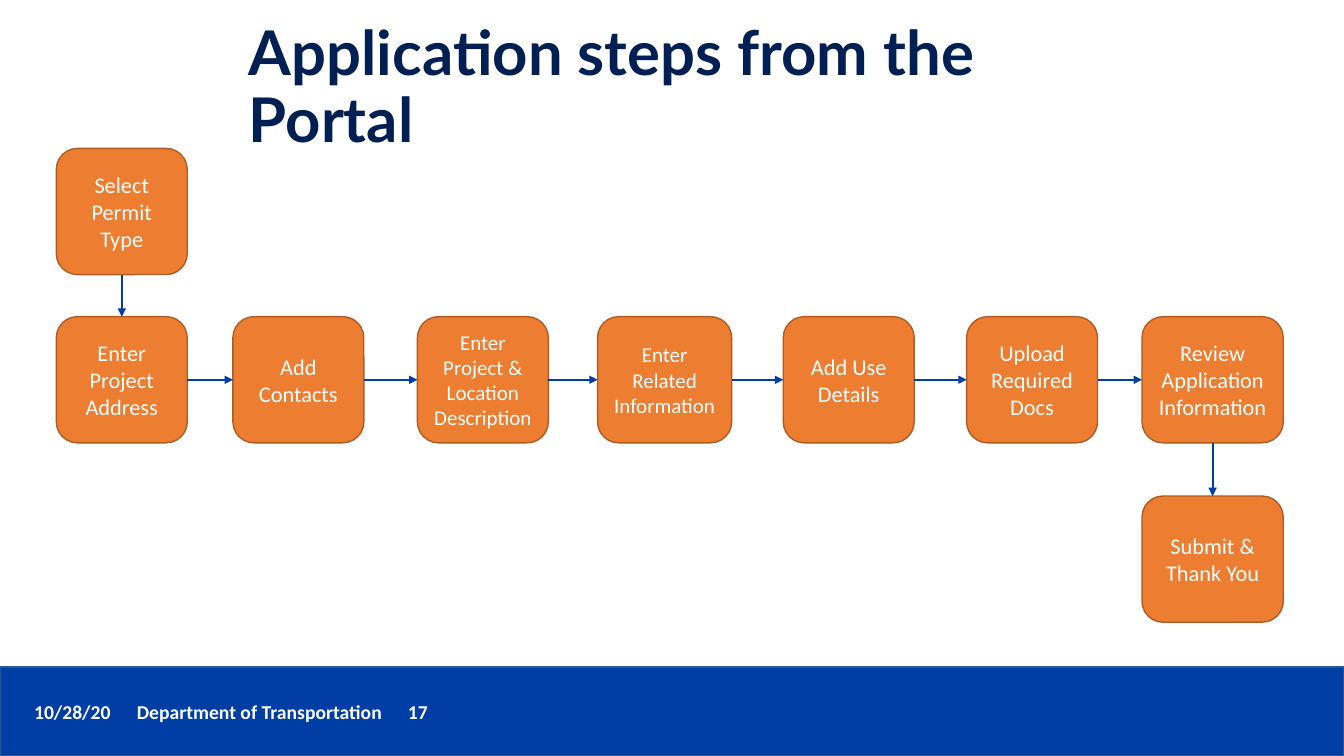
from collections import namedtuple

from pptx import Presentation
from pptx.dml.color import RGBColor
from pptx.enum.shapes import MSO_CONNECTOR as Link, MSO_SHAPE as Shape
from pptx.enum.text import MSO_ANCHOR as Anchor, MSO_AUTO_SIZE as Fit, PP_ALIGN as Align
from pptx.oxml.ns import qn
from pptx.util import Cm, Pt
from lxml.etree import SubElement

WHITE = RGBColor(0xFF, 0xFF, 0xFF)
NAVY = RGBColor(0x00, 0x1F, 0x52)
BLUE = RGBColor(0x00, 0x3D, 0xA5)
BAND_EDGE = RGBColor(0x31, 0x53, 0x8F)
ORANGE = RGBColor(0xED, 0x7D, 0x31)
ORANGE_EDGE = RGBColor(0xAF, 0x5C, 0x24)

TITLE_FONT = {"name": "Lato", "size": Pt(44), "bold": True}
FOOTER_FONT = {"name": "Calibri", "size": Pt(14), "bold": True}
STEP_FONT = {"name": "Calibri", "bold": False}

# Connection sites of a rounded rectangle
TOP, LEFT, BOTTOM, RIGHT = range(4)

Box = namedtuple("Box", "left top width height")  # centimetres

STEP_HEIGHT = 3.18
ROW_TOP = 7.98
# Text, left, width and text size of each step in the row
ROW_STEPS = [
    ("Enter\nProject Address", 1.42, 3.3, 16),
    ("Add Contacts", 5.87, 3.3, 16),
    ("Enter Project & Location Description", 10.52, 3.3, 15),
    ("Enter Related Information", 15.06, 3.38, 15),
    ("Add Use Details", 19.74, 3.3, 16),
    ("Upload Required Docs", 24.36, 3.3, 16),
    ("Review Application Information", 28.78, 3.56, 16),
]


def lengths(box):
    return [Cm(value) for value in box]


def format_font(font, values, color):
    for name, value in values.items():
        setattr(font, name, value)
    font.color.rgb = color


def add_block(page, kind, box, fill, edge):
    block = page.shapes.add_shape(kind, *lengths(box))
    block.shadow.inherit = False
    block.fill.solid()
    block.fill.fore_color.rgb = fill
    block.line.color.rgb = edge
    block.line.width = Pt(1)
    return block


def add_title(page, box, text):
    title = page.shapes.title
    for name, value in zip(box._fields, lengths(box)):
        setattr(title, name, value)
    frame = title.text_frame
    frame.text = text
    frame.word_wrap = True
    frame.auto_size = Fit.NONE
    frame.vertical_anchor = Anchor.MIDDLE
    para = frame.paragraphs[0]
    para.alignment = Align.LEFT
    para.line_spacing = 0.9
    format_font(para.runs[0].font, TITLE_FONT, NAVY)


def add_footer(page, box, parts, stops):
    add_block(page, Shape.RECTANGLE, box, BLUE, BAND_EDGE)
    text_box = Box(box.left + 0.61, box.top + 0.69, 25.55, 0.86)
    frame = page.shapes.add_textbox(*lengths(text_box)).text_frame
    frame.word_wrap = True
    para = frame.paragraphs[0]
    span = para.add_run()
    span.text = "\t".join(parts)
    format_font(span.font, FOOTER_FONT, WHITE)
    # Tab stops set the date, department and page number apart
    tab_list = SubElement(para._p.get_or_add_pPr(), qn("a:tabLst"))
    for stop in stops:
        SubElement(tab_list, qn("a:tab"), pos=str(Cm(stop)), algn="l")


def add_step(page, box, text, size=16):
    step = add_block(page, Shape.ROUNDED_RECTANGLE, box, ORANGE, ORANGE_EDGE)
    frame = step.text_frame
    frame.text = text
    frame.word_wrap = True
    frame.vertical_anchor = Anchor.MIDDLE
    for para in frame.paragraphs:
        para.alignment = Align.CENTER
        for span in para.runs:
            format_font(span.font, {**STEP_FONT, "size": Pt(size)}, WHITE)
    return step


def add_arrow(page, start, start_site, end, end_site):
    arrow = page.shapes.add_connector(Link.STRAIGHT, 0, 0, 0, 0)
    arrow.begin_connect(start, start_site)
    arrow.end_connect(end, end_site)
    arrow.line.color.rgb = BLUE
    arrow.line.width = Pt(1.5)
    SubElement(arrow.line._get_or_add_ln(), qn("a:tailEnd"), type="triangle")
    SubElement(arrow._element.spPr, qn("a:effectLst"))


def add_flow(page, top):
    row = [add_step(page, Box(left, top, width, STEP_HEIGHT), text, size)
           for text, left, width, size in ROW_STEPS]
    _, first_left, first_width, _ = ROW_STEPS[0]
    _, last_left, last_width, _ = ROW_STEPS[-1]
    select = add_step(page, Box(first_left, top - 4.24, first_width, STEP_HEIGHT),
                      "Select Permit Type")
    submit = add_step(page, Box(last_left, top + 4.52, last_width, STEP_HEIGHT),
                      "Submit & Thank You")

    # Down into the row, along it, and down to the end
    add_arrow(page, select, BOTTOM, row[0], TOP)
    for step, following in zip(row, row[1:]):
        add_arrow(page, step, RIGHT, following, LEFT)
    add_arrow(page, row[-1], BOTTOM, submit, TOP)


def main():
    deck = Presentation()
    deck.slide_width, deck.slide_height = Cm(33.87), Cm(19.05)
    page = deck.slides.add_slide(deck.slide_layouts[5])
    add_footer(page, Box(0, 16.81, 33.87, 2.24),
               ["10/28/20", "Department of Transportation", "17"], [2.59, 9.42])
    add_title(page, Box(6.02, 0.41, 21.82, 3.68), "Application steps from the Portal")
    add_flow(page, ROW_TOP)
    deck.save("out.pptx")


if __name__ == "__main__":
    main()
